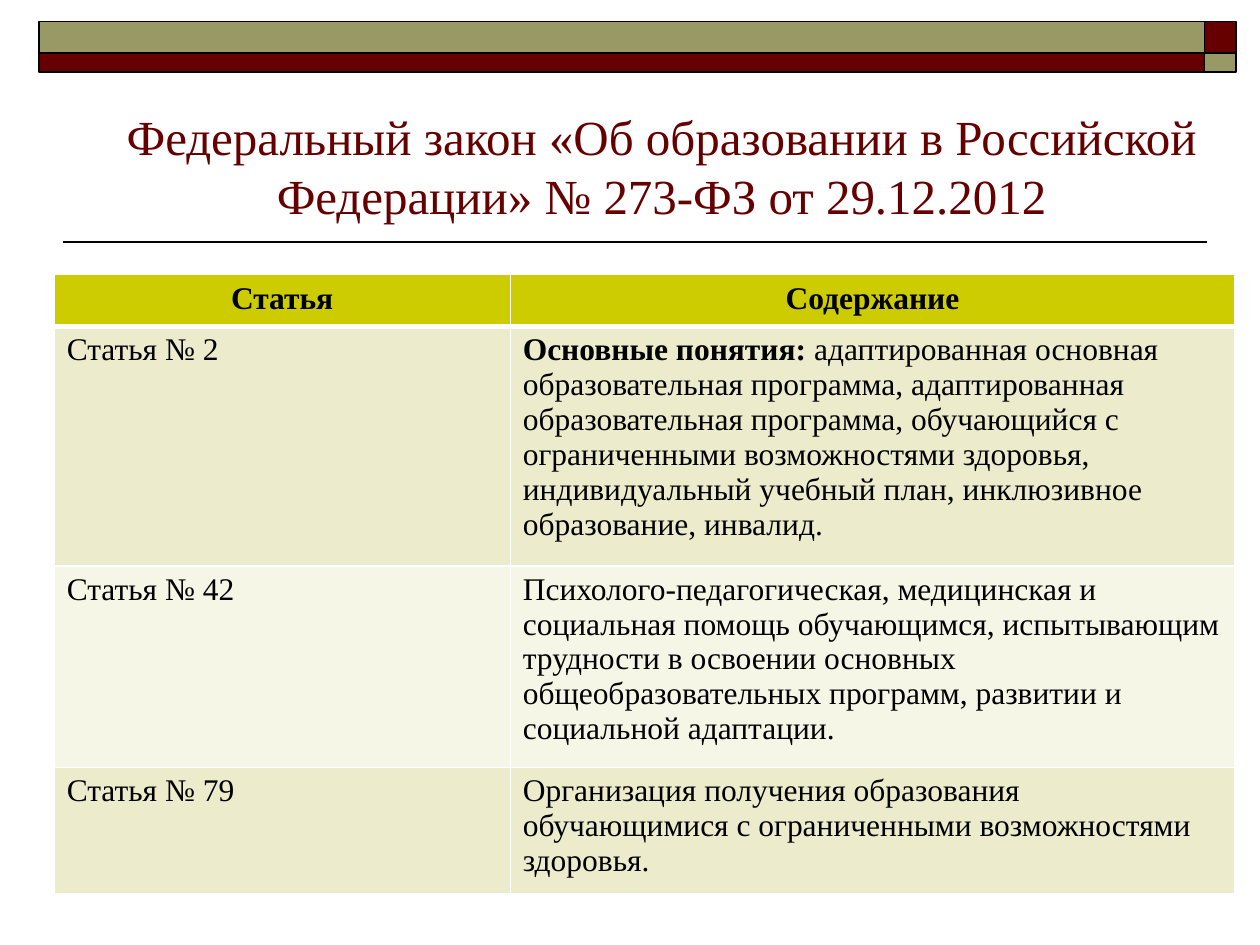
from dataclasses import dataclass

from lxml import etree
from pptx import Presentation
from pptx.dml.color import RGBColor
from pptx.enum.shapes import MSO_CONNECTOR, MSO_SHAPE
from pptx.enum.text import MSO_ANCHOR, PP_ALIGN
from pptx.oxml.ns import qn
from pptx.slide import Slide
from pptx.util import Inches, Pt

RECTANGLE = MSO_SHAPE.RECTANGLE
STRAIGHT = MSO_CONNECTOR.STRAIGHT
BOTTOM = MSO_ANCHOR.BOTTOM
CENTER = PP_ALIGN.CENTER
LEFT = PP_ALIGN.LEFT

BLACK = RGBColor(0x00, 0x00, 0x00)
WHITE = RGBColor(0xFF, 0xFF, 0xFF)
MAROON = RGBColor(0x66, 0x00, 0x00)
OLIVE = RGBColor(0x99, 0x99, 0x66)
HEADER = RGBColor(0xCC, 0xCC, 0x00)
BANDS = [RGBColor(0xEC, 0xEC, 0xCC), RGBColor(0xF6, 0xF6, 0xE7)]

TITLE = "Федеральный закон «Об образовании в Российской Федерации» № 273-ФЗ от 29.12.2012"
ROWS = [
    [[("Статья", True)], [("Содержание", True)]],
    [
        [("Статья № 2", False)],
        [
            ("Основные понятия: ", True),
            ("адаптированная основная образовательная программа, адаптированная "
             "образовательная программа, обучающийся с ограниченными возможностями "
             "здоровья, индивидуальный учебный план, инклюзивное образование, инвалид.", False),
        ],
    ],
    [
        [("Статья № 42", False)],
        [("Психолого-педагогическая, медицинская и социальная помощь обучающимся, "
          "испытывающим трудности в освоении основных общеобразовательных программ, "
          "развитии и социальной адаптации.", False)],
    ],
    [
        [("Статья № 79", False)],
        [("Организация получения образования обучающимися с ограниченными "
          "возможностями здоровья.", False)],
    ],
]
COLUMN_WIDTHS = [3.62, 5.75]
ROW_HEIGHTS = [0.41, 1.9, 1.6, 1]


@dataclass
class SlideBuilder:
    """Draws styled elements on the current slide."""

    slide: Slide
    font_name: str = "Times New Roman"
    title_size: int = 28
    table_size: int = 18
    line_width: int = 1
    header_rule_width: int = 3

    def add_text(self, paragraph, runs, size, color, alignment):
        paragraph.alignment = alignment
        for text, bold in runs:
            run = paragraph.add_run()
            run.text = text
            run.font.name = self.font_name
            run.font.size = Pt(size)
            run.font.bold = bold
            run.font.color.rgb = color

    def rectangle(self, left, top, width, height, color):
        shape = self.slide.shapes.add_shape(
            RECTANGLE, Inches(left), Inches(top), Inches(width), Inches(height))
        shape.shadow.inherit = False
        shape.fill.solid()
        shape.fill.fore_color.rgb = color
        shape.line.color.rgb = BLACK
        shape.line.width = Pt(self.line_width)

    def rule(self, left, right, top):
        connector = self.slide.shapes.add_connector(
            STRAIGHT, Inches(left), Inches(top), Inches(right), Inches(top))
        connector.line.color.rgb = BLACK
        connector.line.width = Pt(self.line_width)
        etree.SubElement(connector._element.spPr, qn("a:effectLst"))

    def title(self, text, left, top, width, height):
        shape = self.slide.shapes.add_textbox(
            Inches(left), Inches(top), Inches(width), Inches(height))
        frame = shape.text_frame
        frame.word_wrap = True
        frame.vertical_anchor = BOTTOM
        self.add_text(frame.paragraphs[0], [(text, False)], self.title_size, MAROON, CENTER)

    def borders(self, cell, row_index):
        widths = dict.fromkeys(("lnL", "lnR", "lnT", "lnB"), self.line_width)
        if row_index < 2:
            widths["lnB" if row_index == 0 else "lnT"] = self.header_rule_width
        properties = cell._tc.get_or_add_tcPr()
        for side, width in widths.items():
            line = etree.SubElement(properties, qn(f"a:{side}"), w=str(Pt(width)))
            fill = etree.SubElement(line, qn("a:solidFill"))
            etree.SubElement(fill, qn("a:srgbClr"), val=str(WHITE))

    def table(self, rows, left, top, widths, heights):
        table = self.slide.shapes.add_table(
            len(rows), len(widths), Inches(left), Inches(top),
            Inches(sum(widths)), Inches(sum(heights))).table
        for column, width in zip(table.columns, widths):
            column.width = Inches(width)
        for row_index, (row, height) in enumerate(zip(rows, heights)):
            table.rows[row_index].height = Inches(height)
            is_header = row_index == 0
            for column_index, runs in enumerate(row):
                cell = table.cell(row_index, column_index)
                self.borders(cell, row_index)
                cell.fill.solid()
                cell.fill.fore_color.rgb = HEADER if is_header else BANDS[(row_index - 1) % 2]
                self.add_text(cell.text_frame.paragraphs[0], runs, self.table_size,
                              BLACK, CENTER if is_header else LEFT)


def main():
    presentation = Presentation()
    presentation.slide_width = Inches(10)
    presentation.slide_height = Inches(7.5)
    builder = SlideBuilder(presentation.slides.add_slide(presentation.slide_layouts[6]))

    builder.rule(0.5, 9.58, 1.92)
    for top, height, bar_color, corner_color in [
        (0.17, 0.25, OLIVE, MAROON),
        (0.42, 0.15, MAROON, OLIVE),
    ]:
        builder.rectangle(0.31, top, 9.25, height, bar_color)
        builder.rectangle(9.56, top, 0.25, height, corner_color)
    builder.title(TITLE, 0.5, 0.58, 9.5, 1.25)
    builder.table(ROWS, 0.43, 2.18, COLUMN_WIDTHS, ROW_HEIGHTS)

    presentation.save("out.pptx")


if __name__ == "__main__":
    main()
